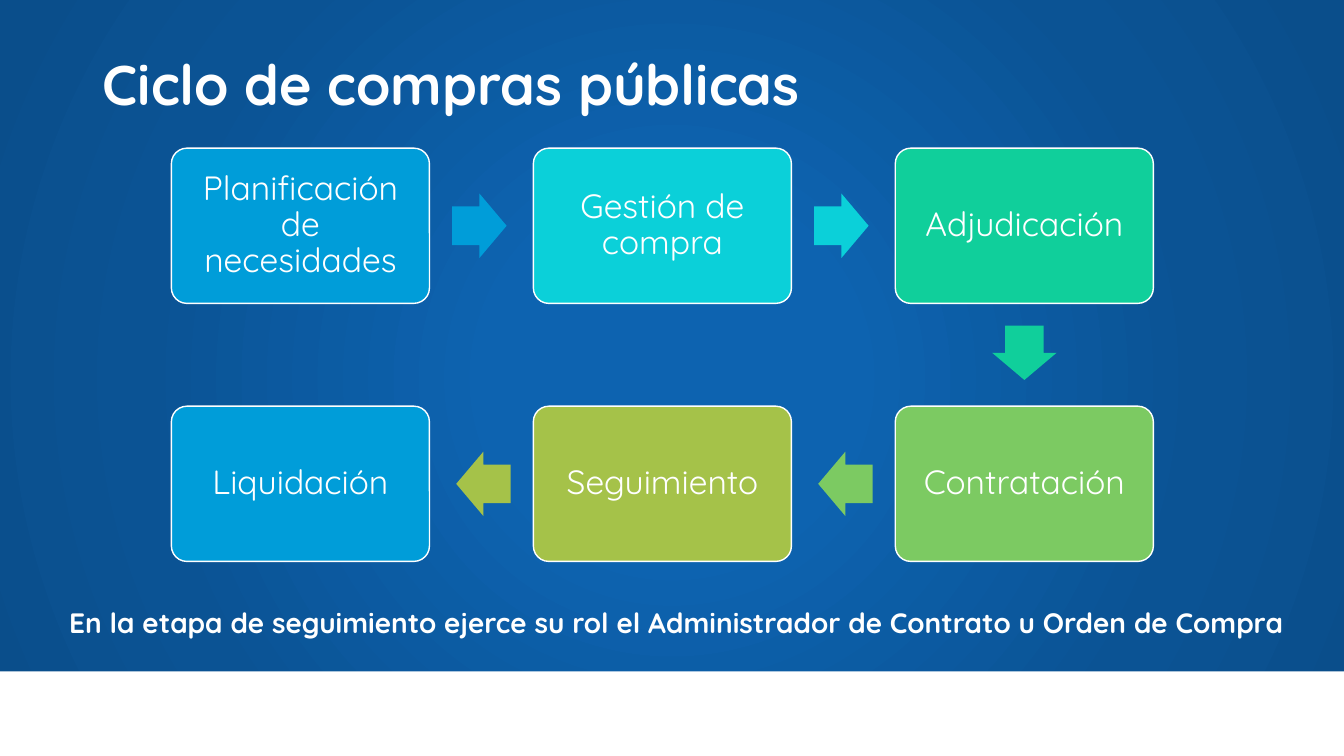
from itertools import pairwise
from math import atan2, degrees

from pptx import Presentation
from pptx.dml.color import RGBColor
from pptx.enum.shapes import MSO_SHAPE
from pptx.enum.text import MSO_ANCHOR, PP_ALIGN
from pptx.oxml import parse_xml
from pptx.util import Inches, Pt

WHITE = RGBColor(0xFF, 0xFF, 0xFF)
BLUE = RGBColor(0x00, 0x9D, 0xD9)
CYAN = RGBColor(0x0B, 0xD0, 0xD9)
TEAL = RGBColor(0x10, 0xCF, 0x9B)
GREEN = RGBColor(0x7C, 0xCA, 0x62)
OLIVE = RGBColor(0xA5, 0xC2, 0x49)
GLOW = [(0, RGBColor(0x0D, 0x63, 0xB0)), (23, RGBColor(0x0D, 0x63, 0xB0)),
        (69, RGBColor(0x0B, 0x53, 0x94)), (97, RGBColor(0x0A, 0x4E, 0x8B))]
DRAWING_NS = "http://schemas.openxmlformats.org/drawingml/2006/main"

# Each stage of the cycle: text, column, row, colour
STAGES = [
    ("Planificación de necesidades", 0, 0, BLUE),
    ("Gestión de compra", 1, 0, CYAN),
    ("Adjudicación", 2, 0, TEAL),
    ("Contratación", 2, 1, GREEN),
    ("Seguimiento", 1, 1, OLIVE),
    ("Liquidación", 0, 1, BLUE),
]


class CycleSlide:
    font = "Quicksand"
    left, top = 1.7, 1.47            # grid origin
    col_pitch, row_pitch = 3.59, 2.56
    box_w, box_h = 2.56, 1.54
    arrow_w, arrow_h = 0.54, 0.64
    arrow_lag = 0.02                 # arrows sit slightly nearer their source

    def __init__(self, prs):
        self.s = prs.slides.add_slide(prs.slide_layouts[5])

    def background(self, stops):
        fill = self.s.background.fill
        fill.solid()
        gs = "".join(f'<a:gs pos="{pos * 1000}"><a:srgbClr val="{color}"/></a:gs>'
                     for pos, color in stops)
        gradient = parse_xml(
            f'<a:gradFill xmlns:a="{DRAWING_NS}" rotWithShape="1"><a:gsLst>{gs}</a:gsLst>'
            '<a:path path="circle"><a:fillToRect l="50000" t="50000" r="50000" b="50000"/>'
            '</a:path></a:gradFill>')
        solid = self.s.element.xpath("./p:cSld/p:bg/p:bgPr/a:solidFill")[0]
        solid.getparent().replace(solid, gradient)

    def label(self, sp, text, size, bold=False, align=PP_ALIGN.CENTER, inset=0.1):
        tf = sp.text_frame
        tf.text = text
        tf.word_wrap = True
        tf.vertical_anchor = MSO_ANCHOR.MIDDLE
        tf.margin_left = tf.margin_right = Inches(inset)
        p = tf.paragraphs[0]
        p.alignment = align
        p.line_spacing = 0.9
        font = p.runs[0].font
        font.name, font.size, font.bold = self.font, Pt(size), bold
        font.color.rgb = WHITE

    def title(self, text, *box):
        sp = self.s.shapes.title
        sp.left, sp.top, sp.width, sp.height = map(Inches, box)
        self.label(sp, text, 40, bold=True, align=PP_ALIGN.LEFT)

    def note(self, text, *box):
        sp = self.s.shapes.add_textbox(*map(Inches, box))
        self.label(sp, text, 20, bold=True)

    def shape(self, kind, color, *box):
        sp = self.s.shapes.add_shape(kind, *map(Inches, box))
        sp.shadow.inherit = False
        sp.fill.solid()
        sp.fill.fore_color.rgb = color
        sp.line.fill.background()
        return sp

    def stage(self, text, col, row, color):
        sp = self.shape(MSO_SHAPE.ROUNDED_RECTANGLE, color,
                        self.left + col * self.col_pitch, self.top + row * self.row_pitch,
                        self.box_w, self.box_h)
        sp.adjustments[0] = 0.1
        sp.line.color.rgb = WHITE
        sp.line.width = Pt(1)
        self.label(sp, text, 24, inset=0.14)

    def arrow(self, start, end, color):
        (c0, r0), (c1, r1) = start, end
        dx, dy = c1 - c0, r1 - r0
        x = self.left + (c0 + c1) / 2 * self.col_pitch + self.box_w / 2 - dx * self.arrow_lag
        y = self.top + (r0 + r1) / 2 * self.row_pitch + self.box_h / 2 - dy * self.arrow_lag
        sp = self.shape(MSO_SHAPE.RIGHT_ARROW, color, x - self.arrow_w / 2,
                        y - self.arrow_h / 2, self.arrow_w, self.arrow_h)
        sp.adjustments[0], sp.adjustments[1] = 0.6, 0.5
        sp.rotation = degrees(atan2(dy, dx))


def main():
    prs = Presentation()
    prs.slide_width, prs.slide_height = Inches(13.33), Inches(7.5)
    slide = CycleSlide(prs)

    # Backdrop and bottom band
    slide.background(GLOW)
    slide.shape(MSO_SHAPE.RECTANGLE, WHITE, 0, 6.66, 13.33, 0.84)

    # Title and closing note
    slide.title("Ciclo de compras públicas", 0.92, 0.18, 11.5, 1.37)
    slide.note("En la etapa de seguimiento ejerce su rol el Administrador de Contrato "
               "u Orden de Compra", 0.35, 5.95, 12.72, 0.48)

    # Stages, joined by arrows in the colour of the stage they leave
    for stage in STAGES:
        slide.stage(*stage)
    for (_, *start, color), (_, *end, _) in pairwise(STAGES):
        slide.arrow(start, end, color)

    prs.save("out.pptx")


if __name__ == "__main__":
    main()
